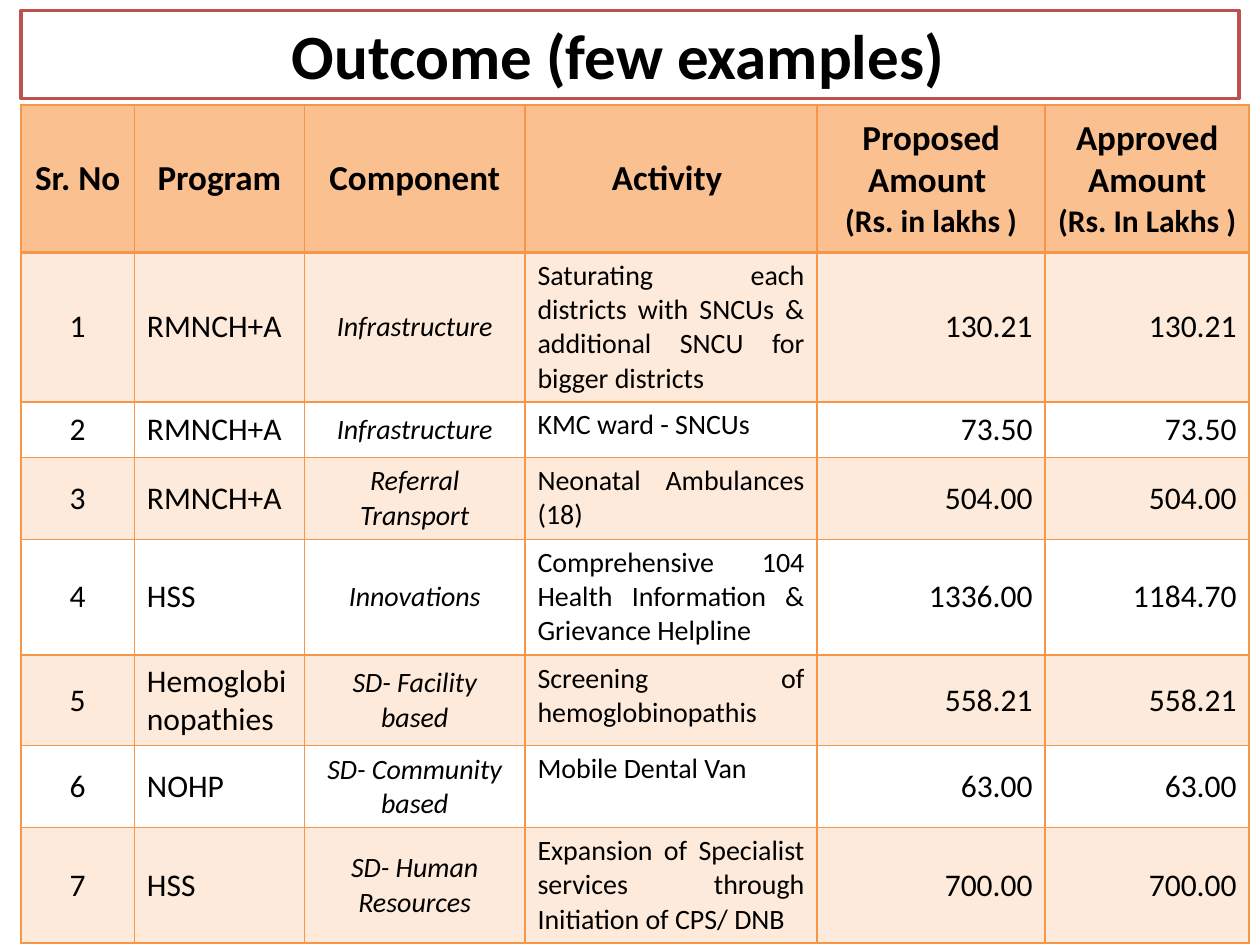
from dataclasses import dataclass

from lxml import etree
from pptx import Presentation
from pptx.dml.color import RGBColor
from pptx.enum import shapes, text
from pptx.oxml import ns
from pptx.util import Pt


@dataclass(frozen=True)
class Theme:
    font: str = "Calibri"
    ink: str = "000000"
    paper: str = "FFFFFF"
    title_line: str = "C0504D"
    accent: str = "F79646"
    header: str = "FAC090"
    band_alpha: int = 20
    title: int = 36
    title_tail: int = 24
    heading: int = 20
    body: int = 18
    small: int = 16


T = Theme()
AL = text.PP_ALIGN
ANCHOR = text.MSO_ANCHOR

COL_WIDTHS = [64.8, 97.2, 126, 167, 130.3, 116.6]
ROW_HEIGHTS = [84.2, 83.5, 31.7, 46.8, 66.2, 51.8, 46.8, 46.8]

# Each heading is a list of lines: (text, size)
HEADINGS = [
    [("Sr. No ", T.heading)],
    [("Program", T.heading)],
    [("Component", T.heading)],
    [("Activity ", T.heading)],
    [("Proposed Amount ", T.heading), ("(Rs. in lakhs )", T.body)],
    [("Approved Amount", T.heading), ("(Rs. In Lakhs )", T.body)],
]
ROWS = [
    ("1", "RMNCH+A", "Infrastructure",
     "Saturating each districts with SNCUs & additional SNCU for bigger districts",
     "130.21", "130.21"),
    ("2", "RMNCH+A", "Infrastructure", "KMC ward - SNCUs", "73.50", "73.50"),
    ("3", "RMNCH+A", "Referral Transport", "Neonatal Ambulances (18)",
     "504.00", "504.00"),
    ("4", "HSS", "Innovations",
     "Comprehensive 104 Health Information & Grievance Helpline",
     "1336.00", "1184.70"),
    ("5", "Hemoglobinopathies", "SD- Facility based",
     "Screening of hemoglobinopathis", "558.21", "558.21"),
    ("6", "NOHP", "SD- Community based", "Mobile Dental Van ", "63.00", "63.00"),
    ("7", "HSS", "SD- Human Resources",
     "Expansion of Specialist services through Initiation of CPS/ DNB",
     "700.00", "700.00"),
]
# Alignment, size and italic of each body column
COL_STYLES = [
    (AL.CENTER, T.body, False),
    (AL.LEFT, T.body, False),
    (AL.CENTER, T.small, True),
    (AL.JUSTIFY, T.small, False),
    (AL.RIGHT, T.body, False),
    (AL.RIGHT, T.body, False),
]
ACTIVITY = 3


def add_run(p, words, size, bold=False, italic=False):
    r = p.add_run()
    r.text = words
    r.font.name = T.font
    r.font.size = Pt(size)
    r.font.bold = bold
    r.font.italic = italic
    r.font.color.rgb = RGBColor.from_string(T.ink)


def write_cell(cell, lines, align, bold=False, italic=False):
    tf = cell.text_frame
    for i, (words, size) in enumerate(lines):
        p = tf.add_paragraph() if i else tf.paragraphs[0]
        p.alignment = align
        add_run(p, words, size, bold, italic)


def fill_cell(cell, color, alpha=100):
    cell.fill.solid()
    cell.fill.fore_color.rgb = RGBColor.from_string(color)
    if alpha < 100:
        clr = cell._tc.tcPr.find(".//" + ns.qn("a:srgbClr"))
        etree.SubElement(clr, ns.qn("a:alpha"), val=str(alpha * 1000))


def border_cell(cell, top=1, bottom=1):
    tc_pr = cell._tc.get_or_add_tcPr()
    widths = {"lnL": 1, "lnR": 1, "lnT": top, "lnB": bottom}
    for i, (side, width) in enumerate(widths.items()):
        ln = etree.Element(ns.qn("a:" + side), w=str(Pt(width)))
        solid = etree.SubElement(ln, ns.qn("a:solidFill"))
        etree.SubElement(solid, ns.qn("a:srgbClr"), val=T.accent)
        tc_pr.insert(i, ln)


def add_title(s, left, top, width, height):
    sp = s.shapes.add_shape(shapes.MSO_SHAPE.RECTANGLE,
                            Pt(left), Pt(top), Pt(width), Pt(height))
    sp.shadow.inherit = False
    sp.fill.solid()
    sp.fill.fore_color.rgb = RGBColor.from_string(T.paper)
    sp.line.color.rgb = RGBColor.from_string(T.title_line)
    sp.line.width = Pt(2)
    tf = sp.text_frame
    tf.word_wrap = True
    tf.vertical_anchor = ANCHOR.MIDDLE
    p = tf.paragraphs[0]
    p.alignment = AL.CENTER
    add_run(p, "Outcome (few examples) ", T.title, bold=True)
    add_run(p, " ", T.title_tail, bold=True)


def add_outcomes(s, left, top, width, height):
    table = s.shapes.add_table(len(ROWS) + 1, len(HEADINGS), Pt(left), Pt(top),
                               Pt(width), Pt(height)).table
    for col, w in zip(table.columns, COL_WIDTHS):
        col.width = Pt(w)
    for row, h in zip(table.rows, ROW_HEIGHTS):
        row.height = Pt(h)

    # Header row
    for c, lines in enumerate(HEADINGS):
        cell = table.cell(0, c)
        cell.vertical_anchor = ANCHOR.MIDDLE
        write_cell(cell, lines, AL.CENTER, bold=True)
        fill_cell(cell, T.header)
        border_cell(cell, bottom=2)

    # Body rows, every other one tinted
    for r, values in enumerate(ROWS, 1):
        for c, (words, (align, size, italic)) in enumerate(zip(values, COL_STYLES)):
            cell = table.cell(r, c)
            at_top = c == ACTIVITY and r > 1
            cell.vertical_anchor = ANCHOR.TOP if at_top else ANCHOR.MIDDLE
            write_cell(cell, [(words, size)], align, italic=italic)
            if r % 2:
                fill_cell(cell, T.accent, T.band_alpha)
            else:
                cell.fill.background()
            border_cell(cell, top=2 if r == 1 else 1)


def main():
    prs = Presentation()
    prs.slide_width, prs.slide_height = Pt(720), Pt(540)
    s = prs.slides.add_slide(prs.slide_layouts[6])
    add_outcomes(s, 12, 60, sum(COL_WIDTHS), sum(ROW_HEIGHTS))
    add_title(s, 12, 6, 696, 50.4)
    prs.save("out.pptx")


if __name__ == "__main__":
    main()
